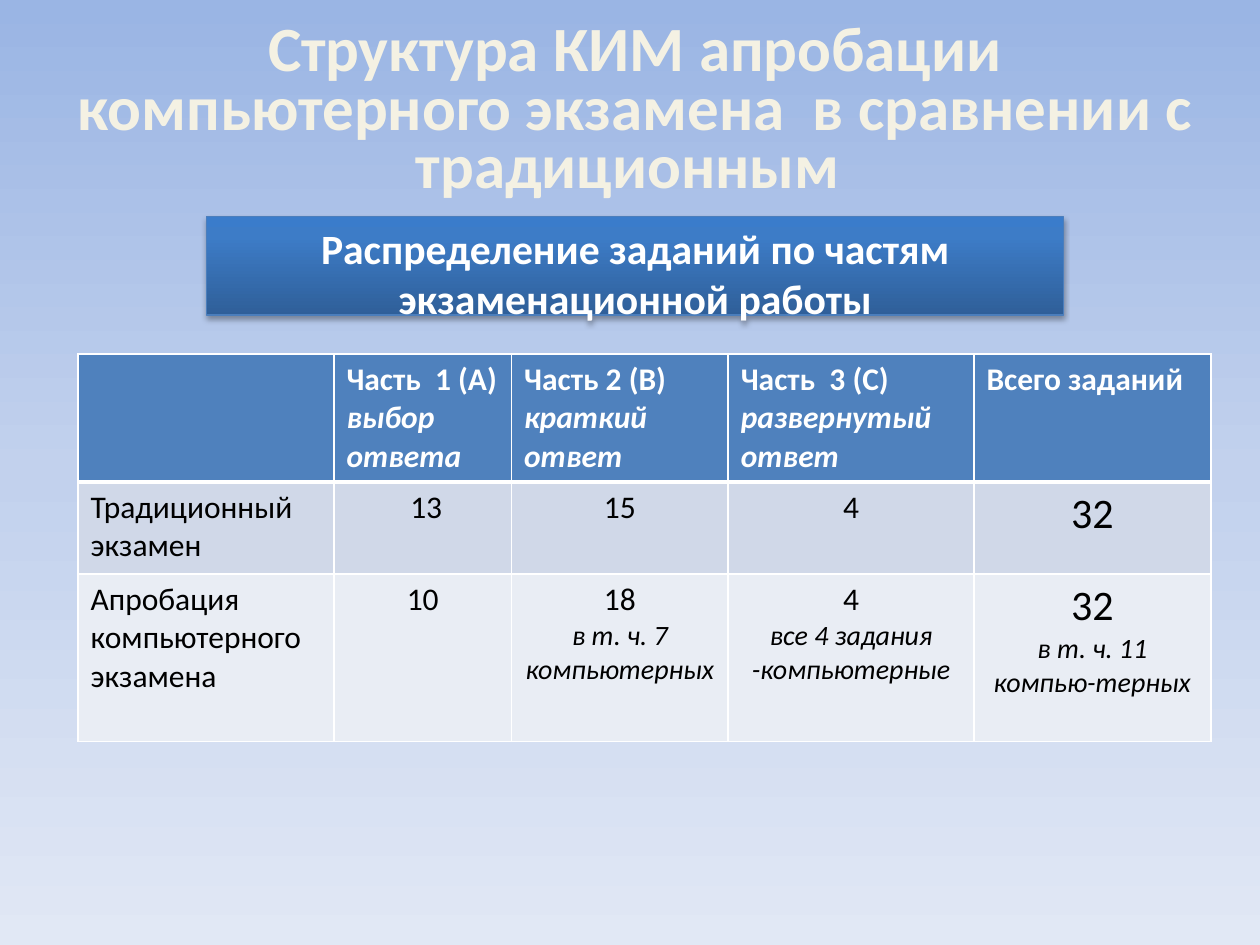
import pptx
import pptx.util
import pptx.dml.color
import pptx.enum.text
import pptx.oxml
import pptx.oxml.ns
from lxml import etree

Inches, Pt = pptx.util.Inches, pptx.util.Pt
RGBColor = pptx.dml.color.RGBColor
Align = pptx.enum.text.PP_ALIGN
qn = pptx.oxml.ns.qn

# Content
TITLE = "Структура КИМ апробации компьютерного экзамена  в сравнении с традиционным "
BANNER = "Распределение заданий по частям экзаменационной работы"
ROWS = [
    ["", "Часть  1 (А)\nвыбор ответа", "Часть 2 (В)\nкраткий\nответ",
     "Часть  3 (С)\nразвернутый  ответ", "Всего заданий"],
    ["Традиционный\nэкзамен", " 13", "15", "4", "32"],
    ["Апробация\nкомпьютерного\nэкзамена", "10", "18\nв т. ч. 7 компьютерных",
     "4\nвсе 4 задания -компьютерные", "32\nв т. ч. 11 компью-терных"],
]
WIDTHS = [2.03, 1.41, 1.72, 1.95, 1.88]
HEIGHTS = [1.0, 0.73, 1.33]

# Colours
FONT = "Calibri"
CREAM = RGBColor(0xF4, 0xF1, 0xE3)
WHITE = RGBColor(0xFF, 0xFF, 0xFF)
BLACK = RGBColor(0, 0, 0)
EDGE = RGBColor(0x4B, 0x7E, 0xBC)
FILLS = [RGBColor(0x4F, 0x81, 0xBD), RGBColor(0xD0, 0xD8, 0xE8),
         RGBColor(0xE9, 0xED, 0xF4)]
SKY = [(0, RGBColor(0x9A, 0xB5, 0xE4)), (50, RGBColor(0xC2, 0xD1, 0xED)),
       (100, RGBColor(0xE1, 0xE8, 0xF5))]
BLUE = [(0, RGBColor(0x2F, 0x5F, 0x99)), (80, RGBColor(0x3D, 0x7C, 0xC7)),
        (100, RGBColor(0x3A, 0x7C, 0xCB))]


def add(parent, tag, **attrs):
    node = etree.SubElement(parent, qn(tag))
    for key, val in attrs.items():
        node.set(key, str(val))
    return node


def shade(fill, root, stops, angle):
    fill.gradient()
    fill.gradient_angle = angle
    group = next(root.iter(qn("a:gsLst")))
    for old in list(group):
        group.remove(old)
    for pos, color in stops:
        stop = add(group, "a:gs", pos=pos * 1000)
        add(stop, "a:srgbClr", val=color)


def style(para, size, color, bold=False, italic=False, align=Align.CENTER):
    para.alignment = align
    for run in para.runs:
        font = run.font
        font.name, font.size = FONT, Pt(size)
        font.bold, font.italic = bold, italic
        font.color.rgb = color


def place(shape, left, top, width, height):
    shape.left, shape.top = Inches(left), Inches(top)
    shape.width, shape.height = Inches(width), Inches(height)


def border(cell, row):
    props = cell._tc.get_or_add_tcPr()
    thick = {(0, "B"), (1, "T")}
    for side in "LRTB":
        width = 3 if (row, side) in thick else 1
        line = add(props, "a:ln" + side, w=Pt(width))
        add(add(line, "a:solidFill"), "a:srgbClr", val=WHITE)


# Slide and background
deck = pptx.Presentation()
deck.slide_width, deck.slide_height = Inches(10), Inches(7.5)
slide = deck.slides.add_slide(deck.slide_layouts[0])
shade(slide.background.fill, slide._element, SKY, 270)

# Title
title = slide.shapes.title
place(title, 0.39, 0.16, 9.3, 1.51)
frame = title.text_frame
frame.text = TITLE
frame.word_wrap = True
frame.vertical_anchor = pptx.enum.text.MSO_ANCHOR.TOP
frame.auto_size = pptx.enum.text.MSO_AUTO_SIZE.NONE
frame.paragraphs[0].line_spacing = Pt(33.2)
style(frame.paragraphs[0], 36, CREAM, bold=True)

# Banner
banner = slide.placeholders[1]
place(banner, 1.64, 1.72, 6.8, 0.78)
shade(banner.fill, banner._element, BLUE, 90)
banner.line.color.rgb = EDGE
banner.line.width = Pt(0.75)
glow = add(add(banner._element.spPr, "a:effectLst"), "a:outerShdw",
           blurRad=Pt(3.1), dist=Pt(1.8), dir=5400000, rotWithShape=0)
add(add(glow, "a:srgbClr", val=BLACK), "a:alpha", val=35000)
frame = banner.text_frame
frame.text = BANNER
frame.auto_size = pptx.enum.text.MSO_AUTO_SIZE.NONE
frame.paragraphs[0].space_before = Pt(4.8)
style(frame.paragraphs[0], 23.8, WHITE, bold=True)

# Table
table = slide.shapes.add_table(
    len(ROWS), len(WIDTHS), Inches(0.62), Inches(2.81),
    Inches(sum(WIDTHS)), Inches(sum(HEIGHTS))).table
for col, width in zip(table.columns, WIDTHS):
    col.width = Inches(width)
for line, height in zip(table.rows, HEIGHTS):
    line.height = Inches(height)

for r, row in enumerate(ROWS):
    for c, text in enumerate(row):
        cell = table.cell(r, c)
        border(cell, r)
        cell.fill.solid()
        cell.fill.fore_color.rgb = FILLS[r]
        cell.text_frame.text = text
        for n, para in enumerate(cell.text_frame.paragraphs):
            if r == 0:
                style(para, 18, WHITE, True, n > 0, Align.LEFT)
            elif c == 0:
                style(para, 18, BLACK, align=Align.LEFT)
            elif n > 0:
                style(para, 16, BLACK, italic=True)
            else:
                style(para, 24 if c == len(row) - 1 else 18, BLACK)

deck.save("out.pptx")
